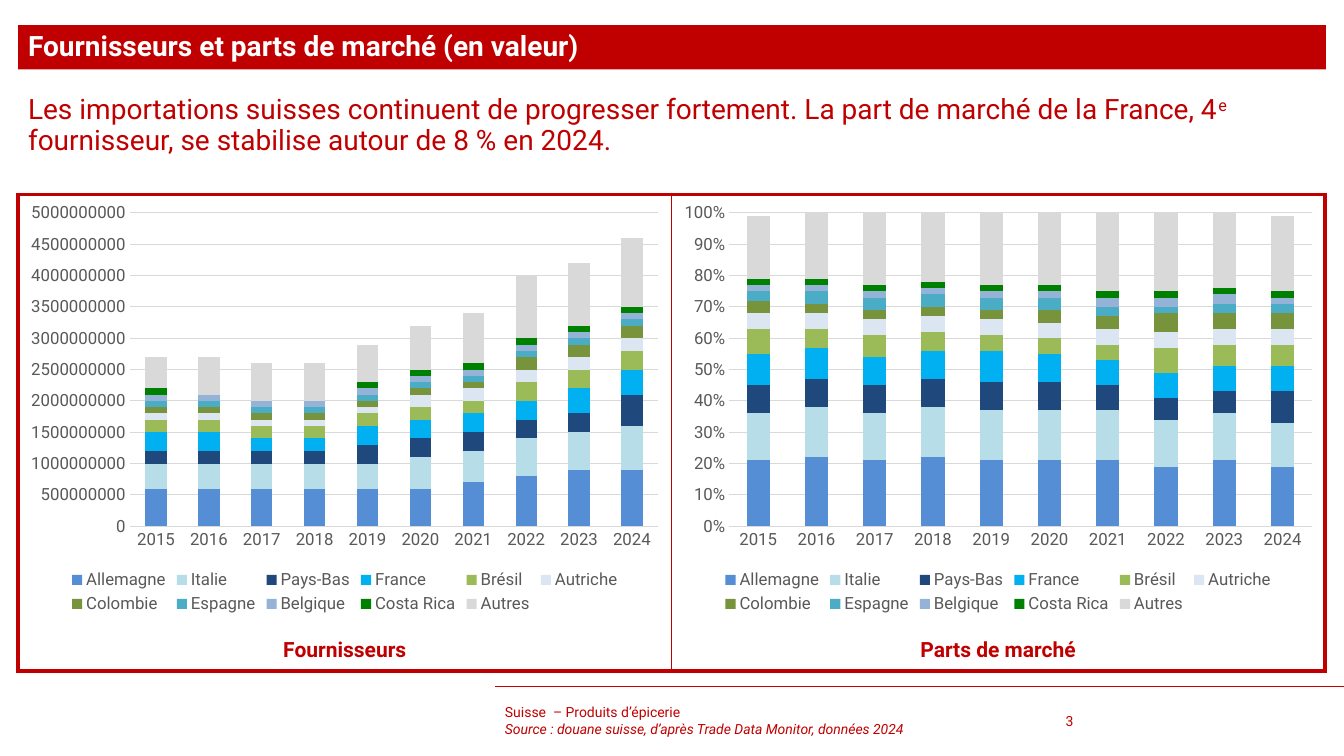
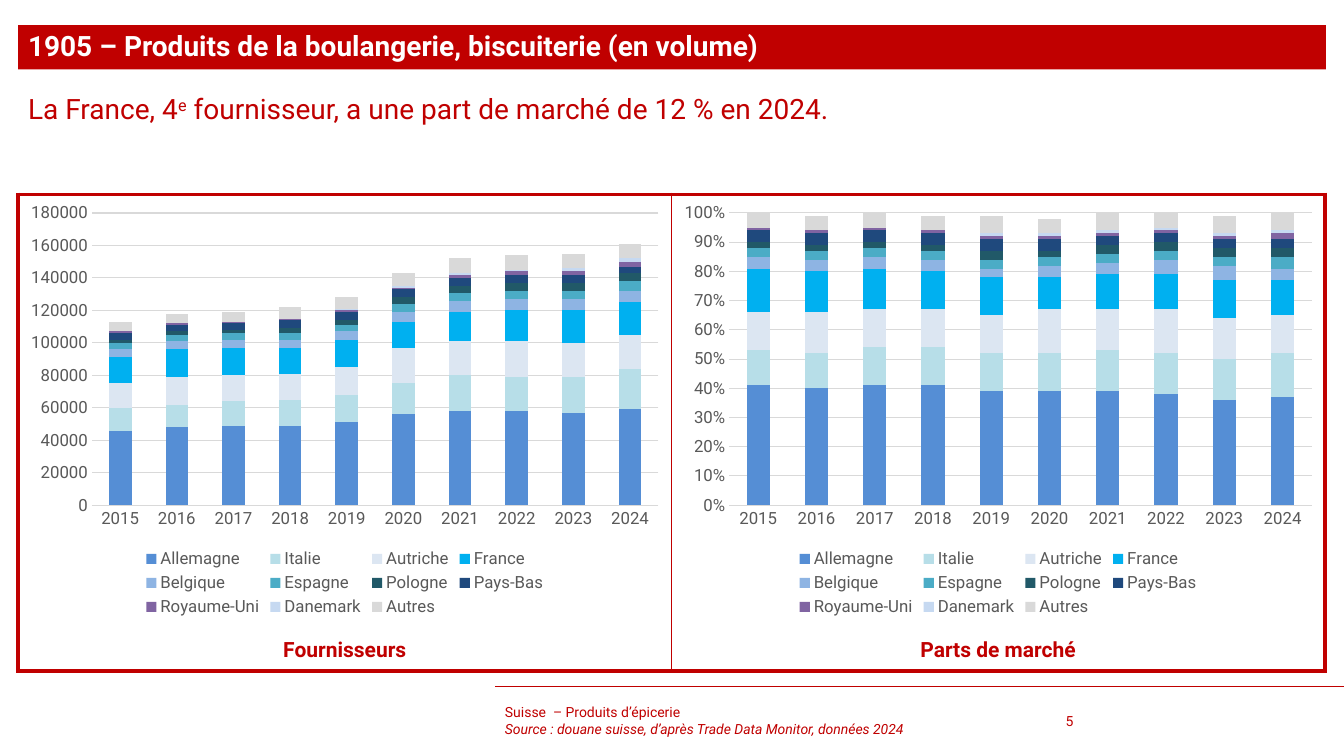
import pptx
import pptx.util
import pptx.dml.color
import pptx.chart.data
import pptx.enum.chart
import pptx.enum.shapes
import pptx.enum.text
import pptx.oxml
import pptx.oxml.ns

Inches, Pt = pptx.util.Inches, pptx.util.Pt
RGB = pptx.dml.color.RGBColor
XL = pptx.enum.chart
ALIGN = pptx.enum.text.PP_ALIGN
ANCHOR = pptx.enum.text.MSO_ANCHOR

# Shared look
FONT = "Roboto"
RED = RGB(0xC0, 0x00, 0x00)
WHITE = RGB(0xFF, 0xFF, 0xFF)
GREY = RGB(0x59, 0x59, 0x59)
PALE = RGB(0xD9, 0xD9, 0xD9)

# Series colours
BLUE = RGB(0x55, 0x8E, 0xD5)
ICE = RGB(0xB7, 0xDE, 0xE8)
NAVY = RGB(0x1F, 0x49, 0x7D)
SKY = RGB(0x00, 0xB0, 0xF0)
LIME = RGB(0x9B, 0xBB, 0x59)
MIST = RGB(0xDC, 0xE6, 0xF2)
OLIVE = RGB(0x77, 0x93, 0x3C)
TEAL = RGB(0x4B, 0xAC, 0xC6)
STEEL = RGB(0x95, 0xB3, 0xD7)
GREEN = RGB(0x00, 0x80, 0x00)
AZURE = RGB(0x8E, 0xB4, 0xE3)
PINE = RGB(0x21, 0x59, 0x68)
PLUM = RGB(0x80, 0x64, 0xA2)
CLOUD = RGB(0xC6, 0xD9, 0xF1)

# Regions: left, top, width, height in inches
BAND = (0.18, 0.25, 12.97, 0.44)
LEAD = (0.18, 0.9, 12.96, 0.81)
FRAME = (0.18, 1.93, 12.96, 4.73)
FOOT = (4.91, 6.81, 8.42, 0.54)

YEARS = [str(year) for year in range(2015, 2025)]

# Name, colour, imports (unit given per slide), market share in %
GROCERY = [
    ("Allemagne", BLUE, [6, 6, 6, 6, 6, 6, 7, 8, 9, 9],
     [21, 22, 21, 22, 21, 21, 21, 19, 21, 19]),
    ("Italie", ICE, [4, 4, 4, 4, 4, 5, 5, 6, 6, 7],
     [15, 16, 15, 16, 16, 16, 16, 15, 15, 14]),
    ("Pays-Bas", NAVY, [2, 2, 2, 2, 3, 3, 3, 3, 3, 5],
     [9, 9, 9, 9, 9, 9, 8, 7, 7, 10]),
    ("France", SKY, [3, 3, 2, 2, 3, 3, 3, 3, 4, 4],
     [10, 10, 9, 9, 10, 9, 8, 8, 8, 8]),
    ("Brésil", LIME, [2, 2, 2, 2, 2, 2, 2, 3, 3, 3],
     [8, 6, 7, 6, 5, 5, 5, 8, 7, 7]),
    ("Autriche", MIST, [1, 1, 1, 1, 1, 2, 2, 2, 2, 2],
     [5, 5, 5, 5, 5, 5, 5, 5, 5, 5]),
    ("Colombie", OLIVE, [1, 1, 1, 1, 1, 1, 1, 2, 2, 2],
     [4, 3, 3, 3, 3, 4, 4, 6, 5, 5]),
    ("Espagne", TEAL, [1, 1, 1, 1, 1, 1, 1, 1, 1, 1],
     [3, 4, 4, 4, 4, 4, 3, 2, 3, 3]),
    ("Belgique", STEEL, [1, 1, 1, 1, 1, 1, 1, 1, 1, 1],
     [2, 2, 2, 2, 2, 2, 3, 3, 3, 2]),
    ("Costa Rica", GREEN, [1, 0, 0, 0, 1, 1, 1, 1, 1, 1],
     [2, 2, 2, 2, 2, 2, 2, 2, 2, 2]),
    ("Autres", PALE, [5, 6, 6, 6, 6, 7, 8, 10, 10, 11],
     [20, 21, 23, 23, 23, 23, 25, 26, 25, 24]),
]
BAKERY = [
    ("Allemagne", BLUE, [46, 48, 49, 49, 51, 56, 58, 58, 57, 59],
     [41, 40, 41, 41, 39, 39, 39, 38, 36, 37]),
    ("Italie", ICE, [14, 14, 15, 16, 17, 19, 22, 21, 22, 25],
     [12, 12, 13, 13, 13, 13, 14, 14, 14, 15]),
    ("Autriche", MIST, [15, 17, 16, 16, 17, 22, 21, 22, 21, 21],
     [13, 14, 13, 13, 13, 15, 14, 15, 14, 13]),
    ("France", SKY, [16, 17, 17, 16, 17, 16, 18, 19, 20, 20],
     [15, 14, 14, 13, 13, 11, 12, 12, 13, 12]),
    ("Belgique", AZURE, [5, 5, 5, 5, 5, 6, 7, 7, 7, 7],
     [4, 4, 4, 4, 3, 4, 4, 5, 5, 4]),
    ("Espagne", TEAL, [4, 4, 4, 4, 4, 5, 5, 5, 5, 6],
     [3, 3, 3, 3, 3, 3, 3, 3, 3, 4]),
    ("Pologne", PINE, [2, 2, 2, 3, 3, 4, 4, 5, 5, 5],
     [2, 2, 2, 2, 3, 2, 3, 3, 3, 3]),
    ("Pays-Bas", NAVY, [4, 4, 4, 5, 5, 5, 5, 5, 5, 4],
     [4, 4, 4, 4, 4, 4, 3, 3, 3, 3]),
    ("Royaume-Uni", PLUM, [1, 1, 1, 1, 1, 1, 2, 2, 2, 3],
     [1, 1, 1, 1, 1, 1, 1, 1, 1, 2]),
    ("Danemark", CLOUD, [0, 0, 0, 0, 1, 1, 1, 1, 2, 2],
     [0, 0, 0, 0, 1, 1, 1, 1, 1, 1]),
    ("Autres", PALE, [6, 6, 6, 7, 7, 8, 9, 9, 9, 9],
     [5, 5, 5, 5, 6, 5, 6, 6, 6, 6]),
]


def place(box):
    return [Inches(side) for side in box]


def style(font, size, color):
    font.name, font.size, font.color.rgb = FONT, Pt(size), color


def add_run(para, text, size, color=RED, bold=False, italic=False, raised=False):
    run = para.add_run()
    run.text = text
    style(run.font, size, color)
    run.font.bold, run.font.italic = bold, italic
    if raised:
        run.font._element.set("baseline", "30000")


def add_box(slide, box, anchor=ANCHOR.TOP):
    frame = slide.shapes.add_textbox(*place(box)).text_frame
    frame.word_wrap = True
    frame.vertical_anchor = anchor
    return frame


def add_band(slide, box, title):
    band = slide.shapes.add_shape(
        pptx.enum.shapes.MSO_SHAPE.RECTANGLE, *place(box))
    band.shadow.inherit = False
    band.fill.solid()
    band.fill.fore_color.rgb = RED
    band.line.fill.background()
    band.text_frame.word_wrap = True
    band.text_frame.vertical_anchor = ANCHOR.MIDDLE
    para = band.text_frame.paragraphs[0]
    para.alignment, para.line_spacing = ALIGN.LEFT, 0.9
    add_run(para, title, 20, WHITE, bold=True)


def add_lead(slide, box, before, after):
    para = add_box(slide, box).paragraphs[0]
    para.line_spacing = 0.9
    add_run(para, before, 20)
    add_run(para, "e", 20, raised=True)
    add_run(para, after, 20)


def add_foot(slide, box, number):
    left, top, width, _ = box
    # Rule
    rule = slide.shapes.add_connector(
        pptx.enum.shapes.MSO_CONNECTOR.STRAIGHT,
        *place((left + width, top, left, top)))
    rule.line.color.rgb, rule.line.width = RED, Pt(0.5)
    pptx.oxml.ns.qn("a:effectLst")
    rule._element.spPr.append(pptx.oxml.parse_xml(
        f'<a:effectLst {pptx.oxml.ns.nsdecls("a")}/>'))
    # Source and page number
    note = add_box(slide, (left, top + 0.14, 5.43, 0.4), ANCHOR.MIDDLE)
    add_run(note.paragraphs[0], "Suisse  – Produits d’épicerie", 10)
    add_run(note.add_paragraph(),
            "Source : douane suisse, d’après Trade Data Monitor, données 2024",
            10, italic=True)
    page = add_box(slide, (left + 5.56, top + 0.14, 0.99, 0.4), ANCHOR.MIDDLE)
    add_run(page.paragraphs[0], str(number), 10)


def add_frame(slide, box):
    table = slide.shapes.add_table(1, 2, *place(box)).table
    table.first_row = table.horz_banding = False
    for cell, sides in zip(table.rows[0].cells,
                           ({"L": 3, "R": 1, "T": 3, "B": 3},
                            {"L": 1, "R": 3, "T": 3, "B": 3})):
        props = cell._tc.get_or_add_tcPr()
        for side, width in sides.items():
            props.append(pptx.oxml.parse_xml(
                f'<a:ln{side} {pptx.oxml.ns.nsdecls("a")} w="{Pt(width)}">'
                f'<a:solidFill><a:srgbClr val="{RED}"/></a:solidFill>'
                f'</a:ln{side}>'))
        cell.fill.background()


def add_stack(slide, box, series, top, step, form):
    data = pptx.chart.data.CategoryChartData(number_format=form)
    data.categories = YEARS
    for name, _, vals in series:
        data.add_series(name, vals)
    chart = slide.shapes.add_chart(
        XL.XL_CHART_TYPE.COLUMN_STACKED, *place(box), data).chart
    style(chart.font, 12, GREY)
    chart.has_title = False
    # Legend
    chart.has_legend = True
    chart.legend.position = XL.XL_LEGEND_POSITION.BOTTOM
    chart.legend.include_in_layout = False
    style(chart.legend.font, 12, GREY)
    # Columns
    plot = chart.plots[0]
    plot.gap_width, plot.overlap, plot.vary_by_categories = 150, 100, False
    for bar, (_, color, _) in zip(plot.series, series):
        bar.format.fill.solid()
        bar.format.fill.fore_color.rgb = color
    # Axes
    years, scale = chart.category_axis, chart.value_axis
    for axis in (years, scale):
        axis.major_tick_mark = axis.minor_tick_mark = XL.XL_TICK_MARK.NONE
        style(axis.tick_labels.font, 12, GREY)
    scale.minimum_scale, scale.maximum_scale, scale.major_unit = 0, top, step
    scale.tick_labels.number_format = form
    scale.tick_labels.number_format_is_linked = False
    scale.format.line.fill.background()
    scale.has_major_gridlines = True
    for line in (years.format.line, scale.major_gridlines.format.line):
        line.color.rgb, line.width = PALE, Pt(0.75)


def add_panel(slide, box, title, tall, *stack):
    left, top, width, _ = box
    para = add_box(slide, (left, top + 4.34, width, 0.35)).paragraphs[0]
    para.alignment = ALIGN.CENTER
    add_run(para, title, 15, bold=True)
    add_stack(slide, (left, top, width, tall), *stack)


def add_page(deck, number, title, lead, rows, unit, top, step, tall):
    slide = deck.slides.add_slide(deck.slide_layouts[6])
    add_foot(slide, FOOT, number)
    add_band(slide, BAND, title)
    add_lead(slide, LEAD, *lead)
    add_frame(slide, FRAME)
    # Two equal panels
    left, up, width, height = FRAME
    half = width / 2
    sums = [(name, color, [val * unit for val in vals])
            for name, color, vals, _ in rows]
    parts = [(name, color, [val / 100 for val in vals])
             for name, color, _, vals in rows]
    add_panel(slide, (left, up, half, height), "Fournisseurs", tall,
              sums, top, step, "General")
    add_panel(slide, (left + half, up, half, height), "Parts de marché", tall,
              parts, 1, 0.1, "0%")


def main():
    deck = pptx.Presentation()
    deck.slide_width, deck.slide_height = Inches(13.33), Inches(7.5)
    add_page(deck, 3, "Fournisseurs et parts de marché (en valeur)",
             ("Les importations suisses continuent de progresser fortement. "
              "La part de marché de la France, 4",
              " fournisseur, se stabilise autour de 8 % en 2024."),
             GROCERY, 100_000_000, 5_000_000_000, 500_000_000, 4.2)
    add_page(deck, 5,
             "1905 – Produits de la boulangerie, biscuiterie (en volume)",
             ("La France, 4",
              " fournisseur, a une part de marché de 12 % en 2024."),
             BAKERY, 1000, 180_000, 20_000, 4.23)
    deck.save("out.pptx")


if __name__ == "__main__":
    main()
